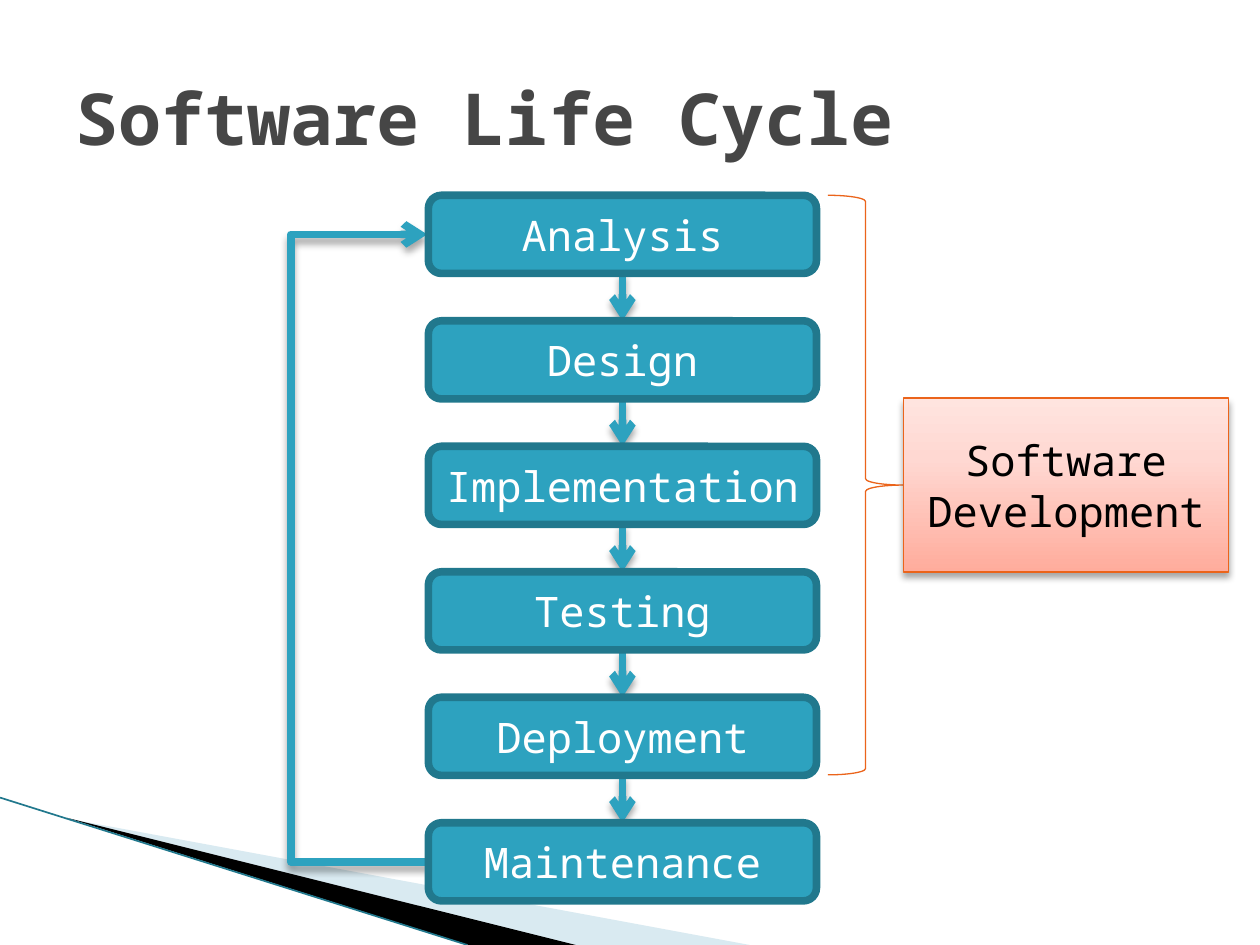
from lxml import etree
from pptx import Presentation
from pptx.dml.color import RGBColor
from pptx.enum.shapes import MSO_CONNECTOR as CONN, MSO_SHAPE as SHAPE
from pptx.enum.text import MSO_ANCHOR as ANCHOR, PP_ALIGN as ALIGN
from pptx.oxml import parse_xml
from pptx.oxml.ns import nsdecls, qn
from pptx.util import Inches, Pt

rgb = RGBColor.from_string
TEAL, DARK_TEAL, ORANGE = "2DA2BF", "21788D", "EB641B"


def write(sp, text, size=24, color="FFFFFF", bold=False, align=ALIGN.CENTER):
    tf = sp.text_frame
    tf.word_wrap = True
    tf.vertical_anchor = ANCHOR.MIDDLE
    p = tf.paragraphs[0]
    p.alignment = align
    r = p.add_run()
    r.text = text
    r.font.name = "Noto Sans Mono"
    r.font.size = Pt(size)
    r.font.bold = bold
    r.font.color.rgb = rgb(color)


def stroke(sp, color, width, arrow=False, shadow=False):
    """Set the outline, an optional arrowhead at the end, and the shadow or its absence."""
    sp.line.color.rgb = rgb(color)
    sp.line.width = Pt(width)
    if arrow:
        etree.SubElement(sp.line._get_or_add_ln(), qn("a:tailEnd"), type="arrow")
    effects = etree.SubElement(sp._element.spPr, qn("a:effectLst"))
    if shadow:
        outer = etree.SubElement(effects, qn("a:outerShdw"), blurRad=str(Pt(4)),
                                 dist=str(Pt(3)), dir="5400000", rotWithShape="0")
        black = etree.SubElement(outer, qn("a:srgbClr"), val="000000")
        etree.SubElement(black, qn("a:alpha"), val="35000")


prs = Presentation()
prs.slide_width, prs.slide_height = Inches(10), Inches(7.5)
s = prs.slides.add_slide(prs.slide_layouts[5])

# Corner decoration
wedges = [
    ("A0CBDC", 40, [(0.55, 6.5), (5.95, 7.5), (4.56, 7.5)]),
    ("000000", 100, [(0.53, 6.49), (4.57, 7.5), (3.72, 7.5)]),
]
for color, opacity, points in wedges:
    corners = [(Inches(x), Inches(y)) for x, y in points]
    fb = s.shapes.build_freeform(*corners[0])
    fb.add_line_segments(corners[1:], close=True)
    wedge = fb.convert_to_shape()
    wedge.shadow.inherit = False
    wedge.line.fill.background()
    wedge.fill.solid()
    wedge.fill.fore_color.rgb = rgb(color)
    if opacity < 100:
        clr = wedge._element.spPr.find(".//" + qn("a:srgbClr"))
        etree.SubElement(clr, qn("a:alpha"), val=str(opacity * 1000))
edge = s.shapes.add_connector(CONN.STRAIGHT, 0, Inches(6.33), Inches(3.71), Inches(7.5))
stroke(edge, DARK_TEAL, 0.95)

title = s.shapes.title
title.left, title.top, title.width, title.height = map(Inches, (0.5, 0.3, 9, 1.25))
write(title, "Software Life Cycle", size=41, color="464646", bold=True, align=ALIGN.LEFT)

# Phases, one under the other
phases = ["Analysis", "Design", "Implementation", "Testing", "Deployment", "Maintenance"]
left, top, width, height, pitch = map(Inches, (3.4, 1.55, 3.08, 0.62, 0.996))
tops = [top + i * pitch for i in range(len(phases))]
center = left + width // 2

for upper, lower in zip(tops, tops[1:]):
    arrow = s.shapes.add_connector(CONN.STRAIGHT, center, upper + height, center, lower)
    stroke(arrow, TEAL, 4.33, arrow=True, shadow=True)

# Loop back from the last phase to the first: half a turn makes it start at the bottom
step, reach = Inches(0.01), Inches(1.11)
loop = s.shapes.add_connector(CONN.ELBOW, left - step, tops[0] + height // 2,
                              left, tops[-1] + height // 2)
loop._element.spPr.find(qn("a:xfrm")).set("rot", "10800000")
guides = loop._element.spPr.find(qn("a:prstGeom")).get_or_add_avLst()
etree.SubElement(guides, qn("a:gd"), name="adj1", fmla=f"val {reach * 100000 // step}")
stroke(loop, TEAL, 4.33, arrow=True, shadow=True)

for phase, y in zip(phases, tops):
    box = s.shapes.add_shape(SHAPE.ROUNDED_RECTANGLE, left, y, width, height)
    box.fill.solid()
    box.fill.fore_color.rgb = rgb(TEAL)
    stroke(box, DARK_TEAL, 4.33)
    box.text_frame.margin_left = box.text_frame.margin_right = Inches(0.05)
    write(box, phase)

# The first five phases make up development
brace = s.shapes.add_shape(SHAPE.RIGHT_BRACE, Inches(6.57), top, Inches(0.6), Inches(4.6))
brace.fill.background()
stroke(brace, ORANGE, 0.75)

group = s.shapes.add_shape(SHAPE.RECTANGLE, Inches(7.17), Inches(3.16), Inches(2.58), Inches(1.38))
stops = "".join(f'<a:gs pos="{pos * 1000}"><a:srgbClr val="{color}"/></a:gs>'
                for pos, color in [(0, "FFAC9C"), (65, "FFD8D2"), (100, "FFE4DF")])
gradient = parse_xml(f'<a:gradFill {nsdecls("a")}><a:gsLst>{stops}</a:gsLst>'
                     '<a:lin ang="16200000" scaled="0"/></a:gradFill>')
group._element.spPr.find(qn("a:prstGeom")).addnext(gradient)
stroke(group, ORANGE, 0.75, shadow=True)
write(group, "Software Development", color="000000")

prs.save("out.pptx")
